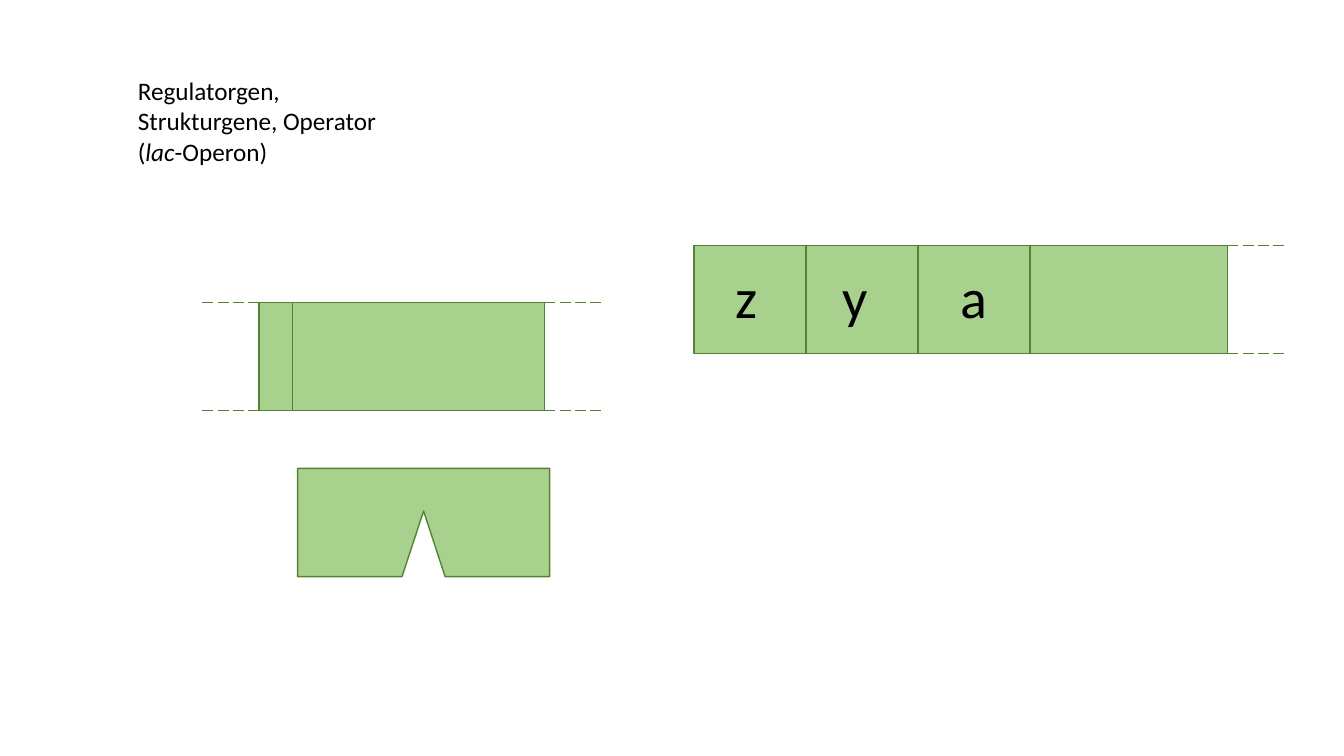
"""Builds the slide on regulator gene, structural genes and operator of the lac operon."""
from lxml.etree import SubElement
from pptx import Presentation
from pptx.dml.color import RGBColor
from pptx.enum.dml import MSO_LINE
from pptx.enum.shapes import MSO_CONNECTOR, MSO_SHAPE
from pptx.oxml.ns import qn
from pptx.util import Pt

GREEN = RGBColor(0xA9, 0xD1, 0x8E)
DARK = RGBColor(0x54, 0x82, 0x35)
BLACK = RGBColor(0, 0, 0)
HIGH = 77.3
DASH = 40.5


def paint(shape):
    shape.shadow.inherit = False
    shape.fill.solid()
    shape.fill.fore_color.rgb = GREEN
    shape.line.color.rgb = DARK
    shape.line.width = Pt(1)


def write(para, text, **form):
    run = para.add_run()
    run.text = text
    look = {"name": "Calibri", "size": Pt(18), **form}
    for key, value in look.items():
        setattr(run.font, key, value)
    run.font.color.rgb = BLACK


deck = Presentation()
deck.slide_width, deck.slide_height = Pt(960), Pt(540)
slide = deck.slides.add_slide(deck.slide_layouts[6])
shapes = slide.shapes

notch = [(392.6, 334.6), (392.6, 411.9), (318, 411.9), (302.6, 365),
         (287.2, 411.9), (212.6, 411.9)]
form = shapes.build_freeform(Pt(212.6), Pt(334.6))
form.add_line_segments([(Pt(x), Pt(y)) for x, y in notch], close=True)
paint(form.convert_to_shape())

strips = [
    (185, 216, [23.8, 180], True),
    (495.7, 175.2, [80, 80, 80, 141], False),
]
for left, top, widths, open_left in strips:
    right = left
    for width in widths:
        box = shapes.add_shape(MSO_SHAPE.RECTANGLE, Pt(right), Pt(top), Pt(width), Pt(HIGH))
        paint(box)
        right += width
    starts = [left - DASH, right] if open_left else [right]
    for start in starts:
        for y in (top, top + HIGH):
            edge = shapes.add_connector(
                MSO_CONNECTOR.STRAIGHT, Pt(start), Pt(y), Pt(start + DASH), Pt(y))
            edge.line.color.rgb = DARK
            edge.line.width = Pt(1)
            edge.line.dash_style = MSO_LINE.LONG_DASH
            SubElement(edge._element.spPr, qn("a:effectLst"))

for gene, left, width in [("z", 518.4, 48), ("y", 594.7, 52), ("a", 679, 54)]:
    label = shapes.add_textbox(Pt(left), Pt(184.3), Pt(width), Pt(55.7))
    label.fill.solid()
    label.fill.fore_color.rgb = GREEN
    label.text_frame.word_wrap = True
    write(label.text_frame.paragraphs[0], gene, size=Pt(40))

head = shapes.add_textbox(Pt(91.4), Pt(50.4), Pt(196.6), Pt(72.7)).text_frame
head.word_wrap = True
write(head.paragraphs[0], "Regulatorgen, Strukturgene, Operator")
para = head.add_paragraph()
for text, slant in [("(", False), ("lac", True), ("-Operon)", False)]:
    write(para, text, italic=slant)

deck.save("out.pptx")
